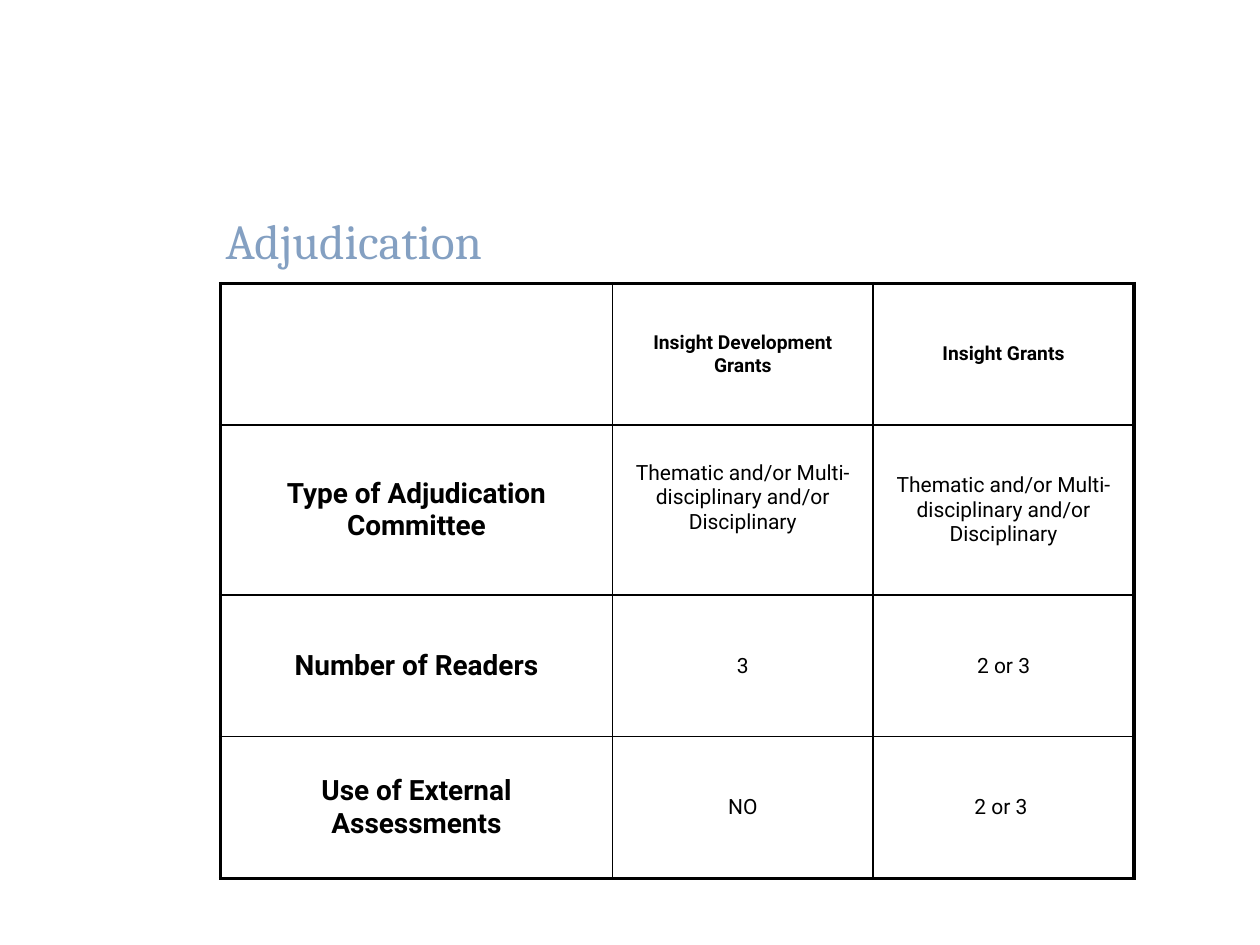
from dataclasses import dataclass

from lxml import etree
from pptx import Presentation
from pptx.dml.color import RGBColor
from pptx.enum.text import MSO_ANCHOR, PP_ALIGN
from pptx.oxml.ns import qn
from pptx.table import Table, _Cell
from pptx.text.text import _Paragraph
from pptx.util import Pt

MIDDLE = MSO_ANCHOR.MIDDLE
LEFT, CENTER = PP_ALIGN.LEFT, PP_ALIGN.CENTER
BLACK = RGBColor(0x00, 0x00, 0x00)
TITLE_BLUE = RGBColor(0x84, 0xA0, 0xC2)
THIN, THICK = Pt(1), Pt(2.25)
COLUMN_WIDTHS = (224, 149, 149)
ROW_HEIGHTS = (81, 97, 81, 81)
COMMITTEE = "Thematic and/or Multi-disciplinary and/or Disciplinary"


@dataclass(frozen=True)
class TextStyle:
    font: str
    size: float
    color: RGBColor = BLACK
    bold: bool = False


@dataclass(frozen=True)
class Entry:
    text: str
    style: TextStyle
    bottom_inset: float = 3.6


TITLE = TextStyle("Cambria", 28, TITLE_BLUE)
HEADER = TextStyle("Roboto", 11, bold=True)
CRITERION = TextStyle("Roboto", 16, bold=True)
ANSWER = TextStyle("Roboto", 12)

ADJUDICATION = (
    (Entry("", HEADER), Entry("Insight Development Grants", HEADER), Entry("Insight Grants", HEADER)),
    (Entry("Type of Adjudication Committee", CRITERION), Entry(COMMITTEE, ANSWER, 18), Entry(COMMITTEE, ANSWER)),
    (Entry("Number of Readers", CRITERION), Entry("3", ANSWER), Entry("2 or 3", ANSWER)),
    (Entry("Use of External Assessments", CRITERION), Entry("NO", ANSWER), Entry("2 or 3 ", ANSWER)),
)


def write(paragraph: _Paragraph, text: str, style: TextStyle, alignment: PP_ALIGN) -> None:
    paragraph.alignment = alignment
    run = paragraph.add_run()
    run.text = text
    run.font.name = style.font
    run.font.size = Pt(style.size)
    run.font.bold = style.bold
    run.font.color.rgb = style.color


def add_borders(cell: _Cell, row: int, column: int) -> None:
    outer_edges = {
        "a:lnL": column == 0,
        "a:lnR": column == len(COLUMN_WIDTHS) - 1,
        "a:lnT": row == 0,
        "a:lnB": row == len(ROW_HEIGHTS) - 1,
    }
    properties = cell._tc.get_or_add_tcPr()
    for position, (edge, is_outer) in enumerate(outer_edges.items()):
        border = etree.Element(qn(edge), w=str(THICK if is_outer else THIN))
        fill = etree.SubElement(border, qn("a:solidFill"))
        etree.SubElement(fill, qn("a:srgbClr"), val=str(BLACK))
        properties.insert(position, border)


def fill_table(table: Table) -> None:
    table.first_row = False
    table.horz_banding = False
    for column, width in zip(table.columns, COLUMN_WIDTHS):
        column.width = Pt(width)
    for row_index, entries in enumerate(ADJUDICATION):
        table.rows[row_index].height = Pt(ROW_HEIGHTS[row_index])
        for column_index, entry in enumerate(entries):
            cell = table.cell(row_index, column_index)
            cell.fill.background()
            cell.vertical_anchor = MIDDLE
            cell.margin_left = cell.margin_right = Pt(7.2)
            cell.margin_top = Pt(3.6)
            cell.margin_bottom = Pt(entry.bottom_inset)
            if entry.text:
                write(cell.text_frame.paragraphs[0], entry.text, entry.style, CENTER)
            add_borders(cell, row_index, column_index)


def main() -> None:
    presentation = Presentation()
    presentation.slide_width, presentation.slide_height = Pt(720), Pt(540)
    slide = presentation.slides.add_slide(presentation.slide_layouts[5])

    heading = slide.shapes.title
    heading.left, heading.top = Pt(121.7), Pt(111.6)
    heading.width, heading.height = Pt(484.6), Pt(51.1)
    heading.text_frame.word_wrap = True
    heading.text_frame.vertical_anchor = MIDDLE
    write(heading.text_frame.paragraphs[0], "Adjudication", TITLE, LEFT)

    grants = slide.shapes.add_table(
        len(ROW_HEIGHTS), len(COLUMN_WIDTHS),
        Pt(126), Pt(162), Pt(sum(COLUMN_WIDTHS)), Pt(sum(ROW_HEIGHTS)),
    )
    fill_table(grants.table)
    presentation.save("out.pptx")


if __name__ == "__main__":
    main()
